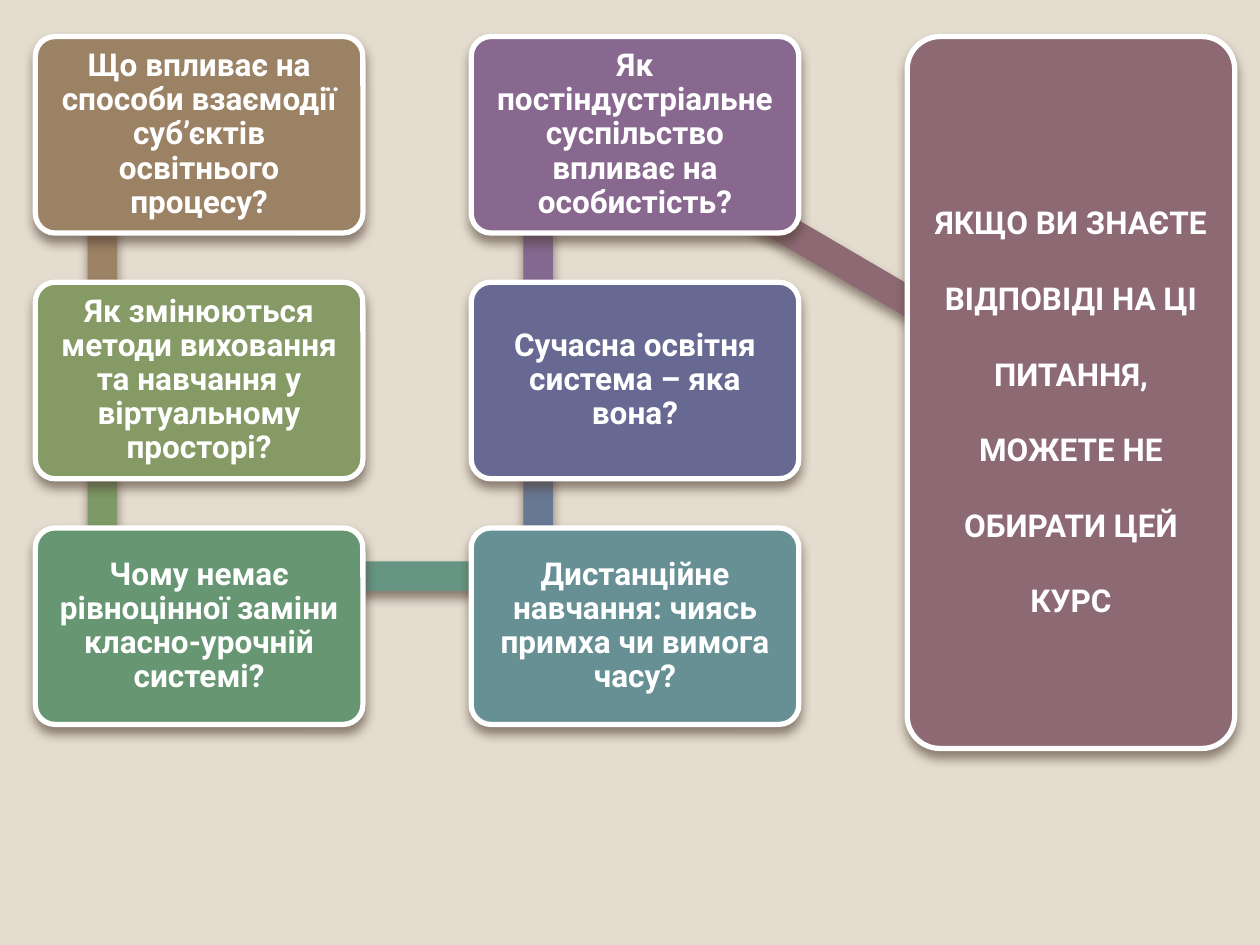
import math
from lxml import etree
from pptx import Presentation
from pptx.dml.color import RGBColor
from pptx.enum import shapes, text
from pptx.oxml import ns
from pptx.util import Pt

WHITE = RGBColor(0xFF, 0xFF, 0xFF)
BACKGROUND = RGBColor(0xE3, 0xDC, 0xCF)
BROWN = RGBColor(0x9C, 0x82, 0x65)
OLIVE = RGBColor(0x85, 0x9A, 0x65)
GREEN = RGBColor(0x66, 0x97, 0x72)
TEAL = RGBColor(0x67, 0x90, 0x95)
INDIGO = RGBColor(0x68, 0x69, 0x92)
PURPLE = RGBColor(0x89, 0x68, 0x90)
MAUVE = RGBColor(0x8D, 0x69, 0x74)
LINK_COLORS = [
    BROWN,
    RGBColor(0x7C, 0x99, 0x66),
    RGBColor(0x66, 0x96, 0x83),
    RGBColor(0x67, 0x78, 0x93),
    RGBColor(0x83, 0x68, 0x90),
    MAUVE,
]
SHADOW_COLOR = "4E3B30"

LEFT, TOP = 20.2, 20.9
COLUMN_STEP, ROW_STEP = 249.1, 140.4
CARD_WIDTH, CARD_HEIGHT, PANEL_HEIGHT = 187.2, 112.3, 406.8
NODE_X, NODE_Y, PANEL_NODE_Y = 38.2, 27.5, 173.3
LINK_THICKNESS = 16.8

CARDS = [
    (0, 0, BROWN, "Що впливає на способи взаємодії суб’єктів освітнього процесу?"),
    (0, 1, OLIVE, "Як змінюються методи виховання та навчання у віртуальному просторі?"),
    (0, 2, GREEN, "Чому немає рівноцінної заміни класно-урочній системі?"),
    (1, 2, TEAL, "Дистанційне навчання: чиясь примха чи вимога часу?"),
    (1, 1, INDIGO, "Сучасна освітня система – яка вона?"),
    (1, 0, PURPLE, "Як постіндустріальне суспільство впливає на особистість?"),
    (2, 0, MAUVE, "ЯКЩО ВИ ЗНАЄТЕ ВІДПОВІДІ НА ЦІ ПИТАННЯ, МОЖЕТЕ НЕ ОБИРАТИ ЦЕЙ КУРС"),
]

presentation = Presentation()
presentation.slide_width, presentation.slide_height = Pt(720), Pt(540)
slide = presentation.slides.add_slide(presentation.slide_layouts[6])
slide.background.fill.solid()
slide.background.fill.fore_color.rgb = BACKGROUND


def add_block(kind, left, top, width, height, color):
    shape = slide.shapes.add_shape(kind, Pt(left), Pt(top), Pt(width), Pt(height))
    shape.fill.solid()
    shape.fill.fore_color.rgb = color
    shape.line.fill.background()
    shape.shadow.inherit = False
    effects = shape.element.spPr.find(ns.qn("a:effectLst"))
    shadow = etree.SubElement(
        effects, ns.qn("a:outerShdw"), blurRad=str(Pt(6)), dist=str(Pt(4)),
        dir="5400000", rotWithShape="0")
    shade = etree.SubElement(shadow, ns.qn("a:srgbClr"), val=SHADOW_COLOR)
    etree.SubElement(shade, ns.qn("a:alpha"), val="60000")
    return shape


nodes = []
for column, row, color, question in CARDS:
    node_y = PANEL_NODE_Y if column == 2 else NODE_Y
    nodes.append((LEFT + column * COLUMN_STEP + NODE_X, TOP + row * ROW_STEP + node_y))

for (x1, y1), (x2, y2), color in zip(nodes, nodes[1:], LINK_COLORS):
    length = math.hypot(x2 - x1, y2 - y1)
    link = add_block(
        shapes.MSO_SHAPE.RECTANGLE, (x1 + x2 - length) / 2,
        (y1 + y2 - LINK_THICKNESS) / 2, length, LINK_THICKNESS, color)
    link.rotation = math.degrees(math.atan2(y2 - y1, x2 - x1))

for column, row, color, question in CARDS:
    is_panel = column == 2
    card = add_block(
        shapes.MSO_SHAPE.ROUNDED_RECTANGLE, LEFT + column * COLUMN_STEP,
        TOP + row * ROW_STEP, CARD_WIDTH, PANEL_HEIGHT if is_panel else CARD_HEIGHT, color)
    card.adjustments[0] = 0.1
    card.line.color.rgb = WHITE
    card.line.width = Pt(3)
    frame = card.text_frame
    frame.word_wrap = True
    frame.vertical_anchor = text.MSO_ANCHOR.MIDDLE
    frame.margin_left = frame.margin_right = Pt(5)
    frame.margin_top = frame.margin_bottom = Pt(5)
    paragraph = frame.paragraphs[0]
    paragraph.text = question
    paragraph.alignment = text.PP_ALIGN.CENTER
    paragraph.line_spacing = 2.0 if is_panel else 0.9
    paragraph.font.name = "Roboto"
    paragraph.font.size = Pt(18)
    paragraph.font.bold = True
    paragraph.font.color.rgb = WHITE

presentation.save("out.pptx")
